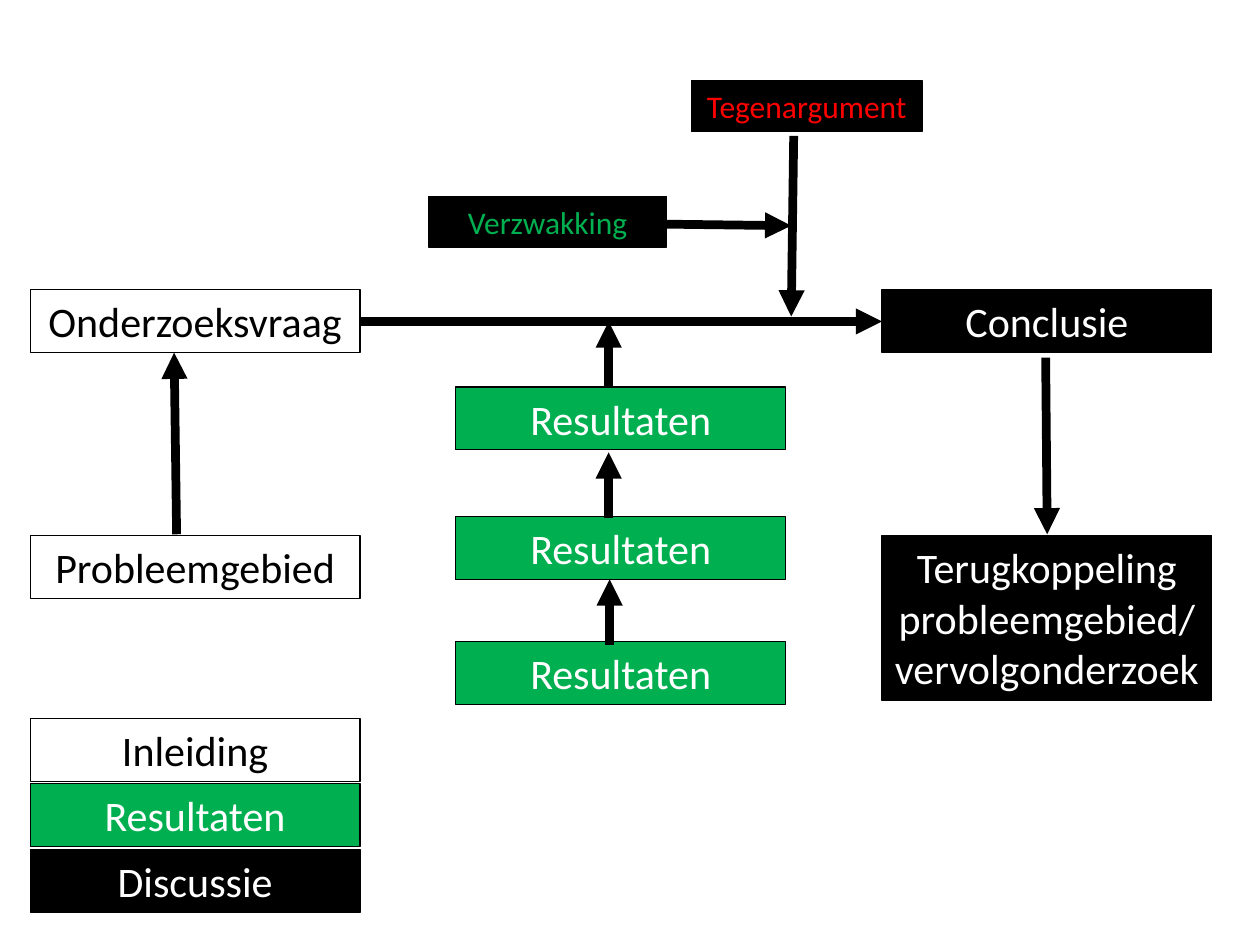
from lxml.etree import SubElement
from pptx import Presentation
from pptx.dml.color import RGBColor
from pptx.enum.shapes import MSO_CONNECTOR as Connector, MSO_SHAPE as Shape
from pptx.enum.text import MSO_ANCHOR as Anchor, MSO_AUTO_SIZE as AutoSize, PP_ALIGN as Align
from pptx.oxml.ns import qn
from pptx.util import Cm, Pt

BLACK, WHITE, GREEN, RED = "000000", "FFFFFF", "00B050", "FF0000"
INTRODUCTION = (WHITE, BLACK)
RESULTS = (GREEN, WHITE)
DISCUSSION = (BLACK, WHITE)

LEFT, MIDDLE, RIGHT = 0.61, 9.19, 17.78
TOP_ROW, BOTTOM_ROW = 5.84, 10.8
BOX_WIDTH, BOX_HEIGHT = 6.65, 1.27
CLAIM_Y = 6.48
LEGEND_TOP, LEGEND_STEP = 14.48, 1.32
RESULT_ARROW = 1.32


def color(hex_code):
    """Turn a hex string into a colour."""
    return RGBColor.from_string(hex_code)


def add_box(slide, label, left, top, colors, width=BOX_WIDTH, height=BOX_HEIGHT, size=24):
    """Add a bordered box with a centred label."""
    fill, ink = colors
    box = slide.shapes.add_shape(Shape.RECTANGLE, Cm(left), Cm(top), Cm(width), Cm(height))
    box.shadow.inherit = False
    box.fill.solid()
    box.fill.fore_color.rgb = color(fill)
    box.line.color.rgb = color(BLACK)
    box.line.width = Pt(0.75)
    frame = box.text_frame
    frame.word_wrap = True
    frame.auto_size = AutoSize.SHAPE_TO_FIT_TEXT
    frame.vertical_anchor = Anchor.TOP
    frame.text = label
    paragraph = frame.paragraphs[0]
    paragraph.alignment = Align.CENTER
    paragraph.font.name = "Calibri"
    paragraph.font.size = Pt(size)
    paragraph.font.color.rgb = color(ink)


def add_arrow(slide, x1, y1, x2, y2):
    """Add a thick black arrow that points at the second position."""
    arrow = slide.shapes.add_connector(Connector.STRAIGHT, Cm(x1), Cm(y1), Cm(x2), Cm(y2))
    arrow.line.color.rgb = color(BLACK)
    arrow.line.width = Pt(5)
    SubElement(arrow.line._get_or_add_ln(), qn("a:tailEnd"), type="triangle")
    SubElement(arrow._element.spPr, qn("a:effectLst"))


def add_argument(slide):
    """Add the line of reasoning from problem area to feedback."""
    add_box(slide, "Onderzoeksvraag", LEFT, TOP_ROW, INTRODUCTION)
    add_box(slide, "Probleemgebied", LEFT, BOTTOM_ROW, INTRODUCTION)
    add_box(slide, "Conclusie", RIGHT, TOP_ROW, DISCUSSION)
    add_box(slide, "Terugkoppeling probleemgebied/vervolgonderzoek",
            RIGHT, BOTTOM_ROW, DISCUSSION, height=3.33)
    add_box(slide, "Tegenargument", 13.94, 1.63, (BLACK, RED), 4.65, 1.02, 18)
    add_box(slide, "Verzwakking", 8.64, 3.96, (BLACK, GREEN), 4.8, 1.02, 18)
    add_arrow(slide, LEFT + BOX_WIDTH, CLAIM_Y, RIGHT, CLAIM_Y)
    add_arrow(slide, 3.56, 10.77, 3.51, 7.11)
    add_arrow(slide, 21.08, 7.21, 21.11, 10.77)
    add_arrow(slide, 16, 2.74, 15.95, 6.38)
    add_arrow(slide, 13.44, 4.52, 15.95, 4.55)


def add_legend(slide):
    """Add the key that links each colour to a report section."""
    sections = (("Inleiding", INTRODUCTION), ("Resultaten", RESULTS), ("Discussie", DISCUSSION))
    for row, (label, colors) in enumerate(sections):
        add_box(slide, label, LEFT, LEGEND_TOP + row * LEGEND_STEP, colors)


def add_results(slide):
    """Add the stacked results, each with an arrow upwards."""
    for top, arrow_x, arrow_y in ((7.8, 12.27, 7.8), (10.41, 12.27, 10.44), (12.93, 12.29, 13)):
        add_box(slide, "Resultaten", MIDDLE, top, RESULTS)
        add_arrow(slide, arrow_x, arrow_y, arrow_x, arrow_y - RESULT_ARROW)


def main():
    """Build the slide and save it."""
    deck = Presentation()
    deck.slide_width, deck.slide_height = Cm(25.4), Cm(19.05)
    slide = deck.slides.add_slide(deck.slide_layouts[6])
    add_argument(slide)
    add_legend(slide)
    add_results(slide)
    deck.save("out.pptx")


if __name__ == "__main__":
    main()
